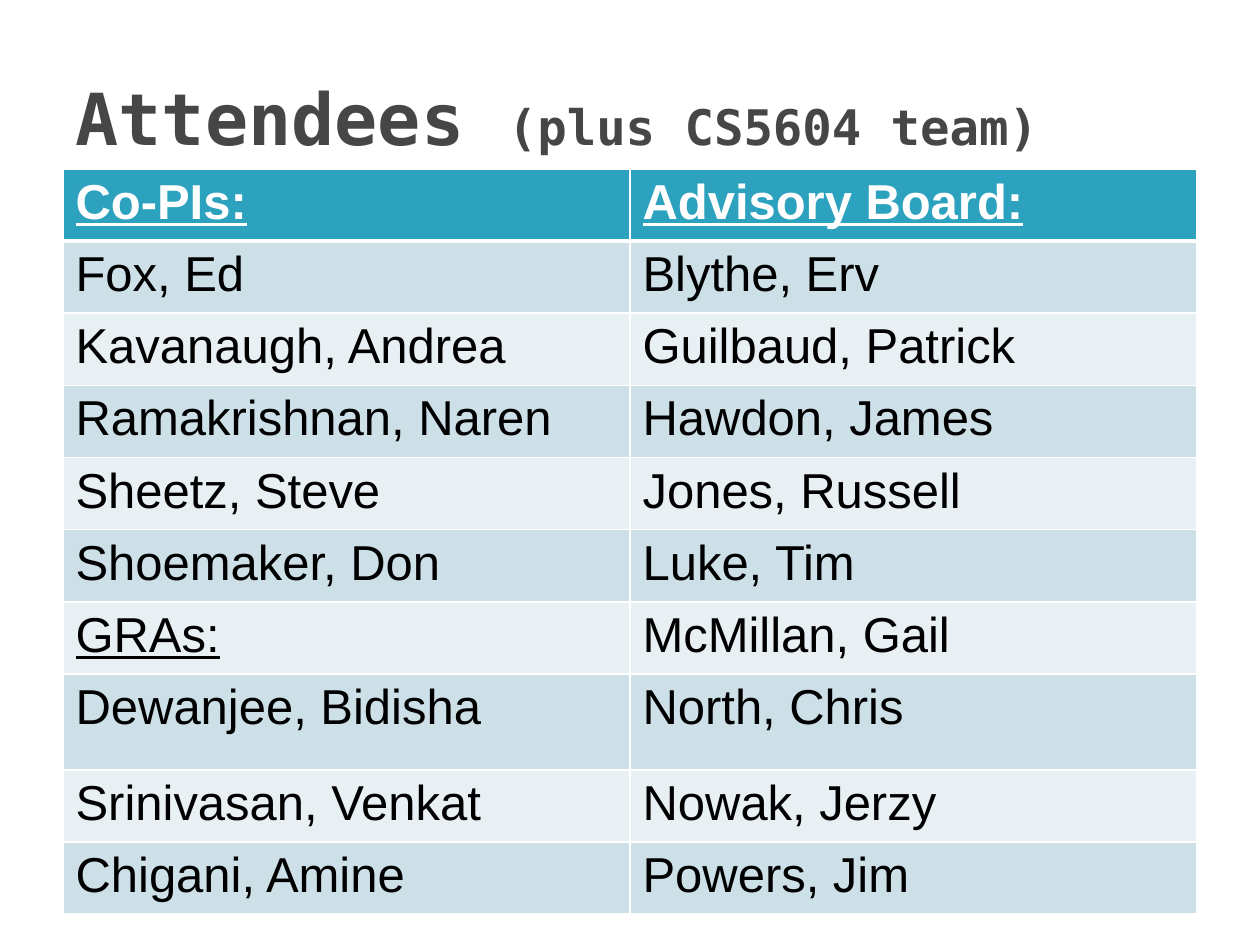
from lxml import etree
from pptx import Presentation
from pptx import util as u
from pptx.dml.color import RGBColor
from pptx.enum import text
from pptx.oxml import ns

WHITE = RGBColor(0xFF, 0xFF, 0xFF)
BLACK = RGBColor(0, 0, 0)
GRAY = RGBColor(0x46, 0x46, 0x46)
TEAL = RGBColor(0x2D, 0xA2, 0xBF)
BANDS = [RGBColor(0xE8, 0xF0, 0xF4), RGBColor(0xCD, 0xE0, 0xE8)]

WIDTH, HEIGHT = u.Inches(10), u.Inches(7.5)
MARGIN = 0.05
ROW_HEIGHT, TALL_ROW_HEIGHT = u.Inches(0.573), u.Inches(0.76)
TALL_ROW = 7

ATTENDEES = [
    ("Co-PIs:", "Advisory Board:"),
    ("Fox, Ed", "Blythe, Erv"),
    ("Kavanaugh, Andrea", "Guilbaud, Patrick"),
    ("Ramakrishnan, Naren", "Hawdon, James"),
    ("Sheetz, Steve", "Jones, Russell"),
    ("Shoemaker, Don", "Luke, Tim"),
    ("GRAs:", "McMillan, Gail"),
    ("Dewanjee, Bidisha", "North, Chris"),
    ("Srinivasan, Venkat", "Nowak, Jerzy"),
    ("Chigani, Amine", "Powers, Jim"),
]


def add_run(paragraph, words, color, **formats):
    run = paragraph.add_run()
    run.text = words
    run.font.color.rgb = color
    for name, value in formats.items():
        setattr(run.font, name, value)


def set_borders(cell, bottom_width):
    properties = cell._tc.get_or_add_tcPr()
    widths = {"lnL": 1, "lnR": 1, "lnT": 1, "lnB": bottom_width}
    for position, (side, width) in enumerate(widths.items()):
        line = etree.Element(ns.qn(f"a:{side}"), w=str(u.Pt(width)))
        fill = etree.SubElement(line, ns.qn("a:solidFill"))
        etree.SubElement(fill, ns.qn("a:srgbClr"), val=str(WHITE))
        properties.insert(position, line)


def add_heading(slide):
    heading = slide.shapes.title
    place = {"left": int(WIDTH * MARGIN), "top": int(HEIGHT * 0.04),
             "width": int(WIDTH * (1 - 2 * MARGIN)), "height": u.Inches(1.25)}
    for name, value in place.items():
        setattr(heading, name, value)
    heading.text_frame.vertical_anchor = text.MSO_ANCHOR.MIDDLE
    paragraph = heading.text_frame.paragraphs[0]
    paragraph.alignment = text.PP_ALIGN.LEFT
    for words, size in [("Attendees ", 41), ("(plus CS5604 team)", 28)]:
        add_run(paragraph, words, GRAY, name="DejaVu Sans Mono",
                size=u.Pt(size), bold=True)


def fill_cell(cell, words, row):
    header = row == 0
    cell.fill.solid()
    cell.fill.fore_color.rgb = TEAL if header else BANDS[row % 2]
    add_run(cell.text_frame.paragraphs[0], words, WHITE if header else BLACK,
            name="Arial", size=u.Pt(28), bold=header,
            underline=words.endswith(":"))
    set_borders(cell, 3 if header else 1)


def add_attendees(slide):
    table = slide.shapes.add_table(
        len(ATTENDEES), len(ATTENDEES[0]), int(WIDTH * MARGIN), u.Inches(1.34),
        int(WIDTH * (1 - 2 * MARGIN)),
        ROW_HEIGHT * (len(ATTENDEES) - 1) + TALL_ROW_HEIGHT).table
    for row, names in enumerate(ATTENDEES):
        table.rows[row].height = TALL_ROW_HEIGHT if row == TALL_ROW else ROW_HEIGHT
        for column, words in enumerate(names):
            fill_cell(table.cell(row, column), words, row)


def main():
    deck = Presentation()
    deck.slide_width, deck.slide_height = WIDTH, HEIGHT
    slide = deck.slides.add_slide(deck.slide_layouts[5])
    add_attendees(slide)
    add_heading(slide)
    deck.save("out.pptx")


if __name__ == "__main__":
    main()
